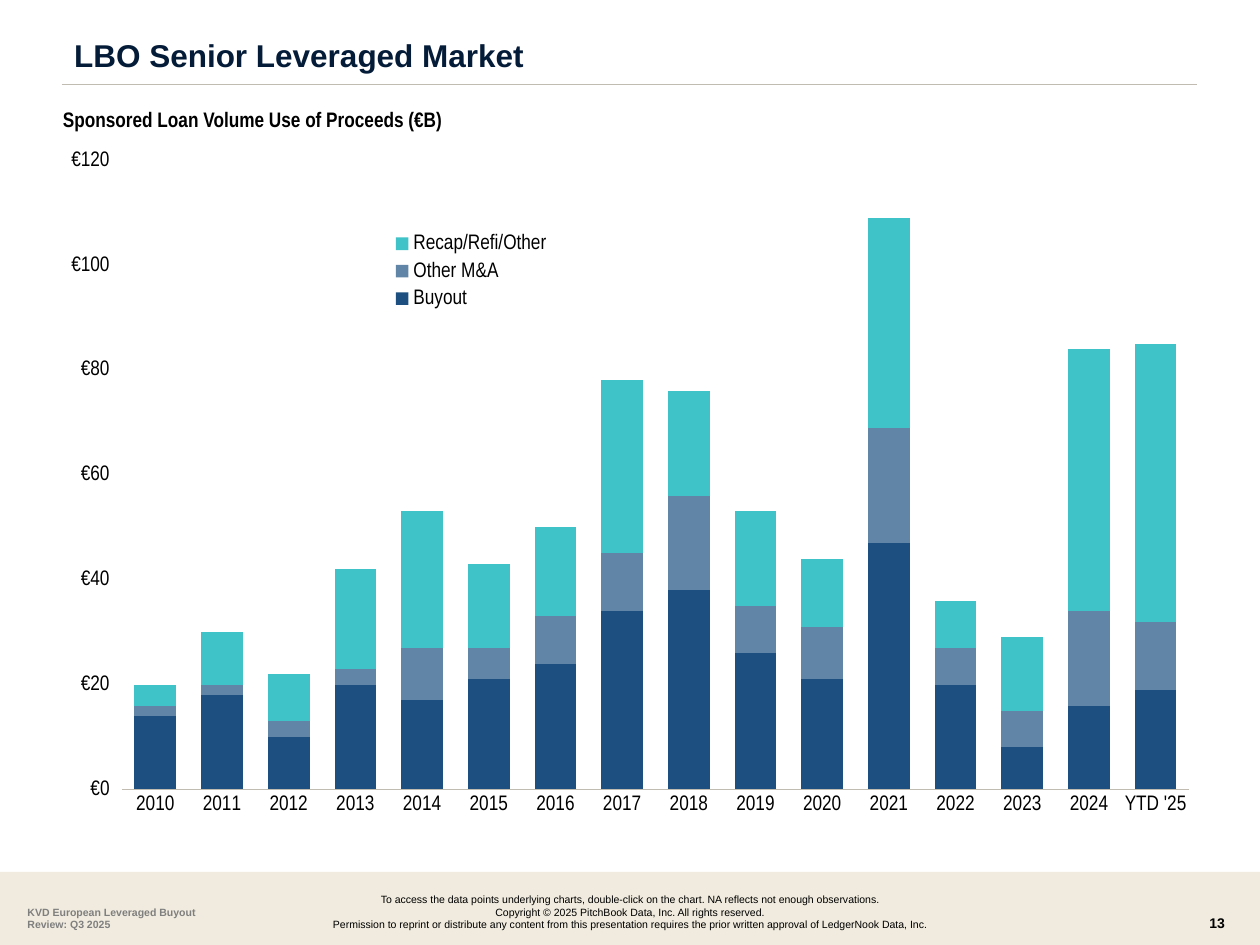
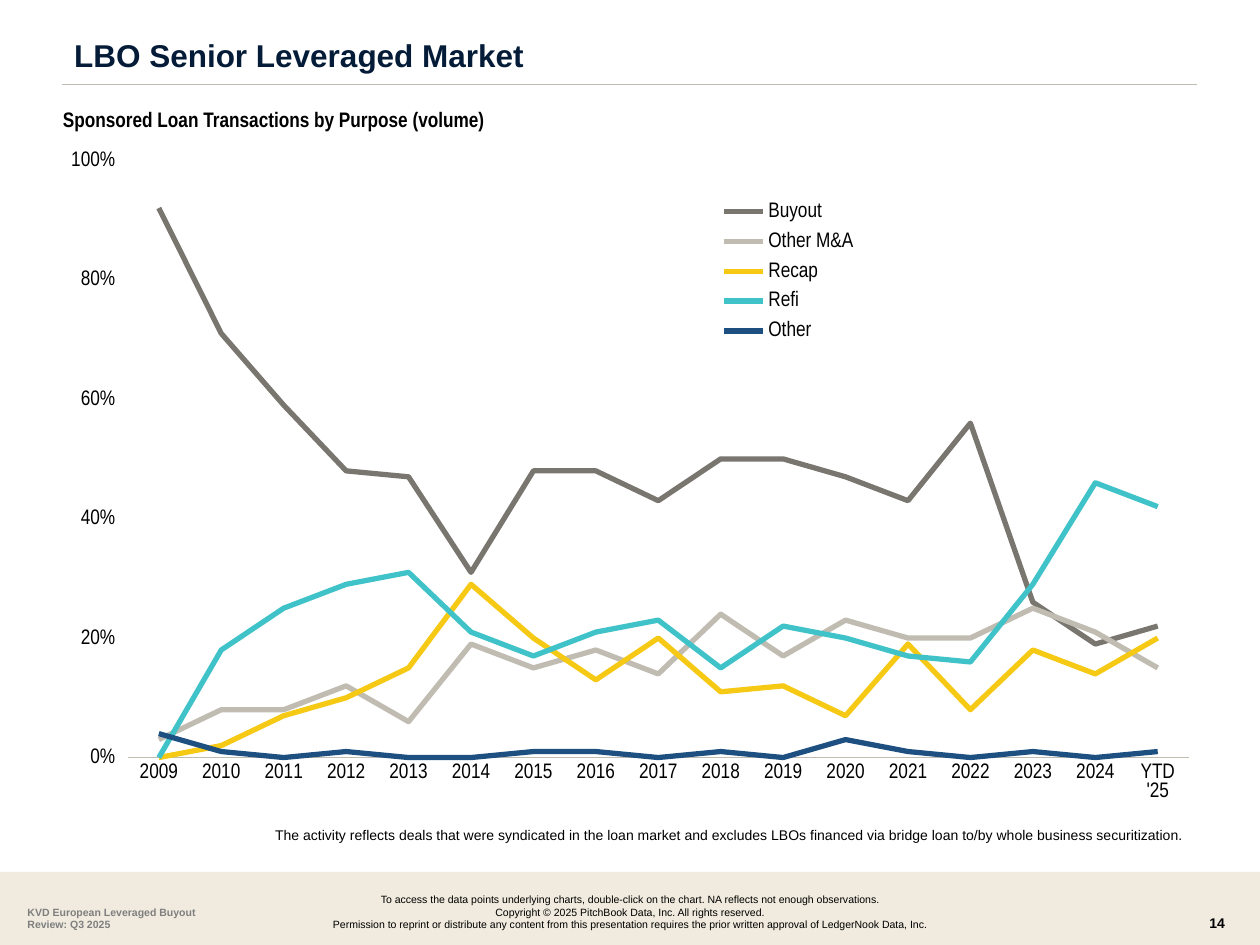
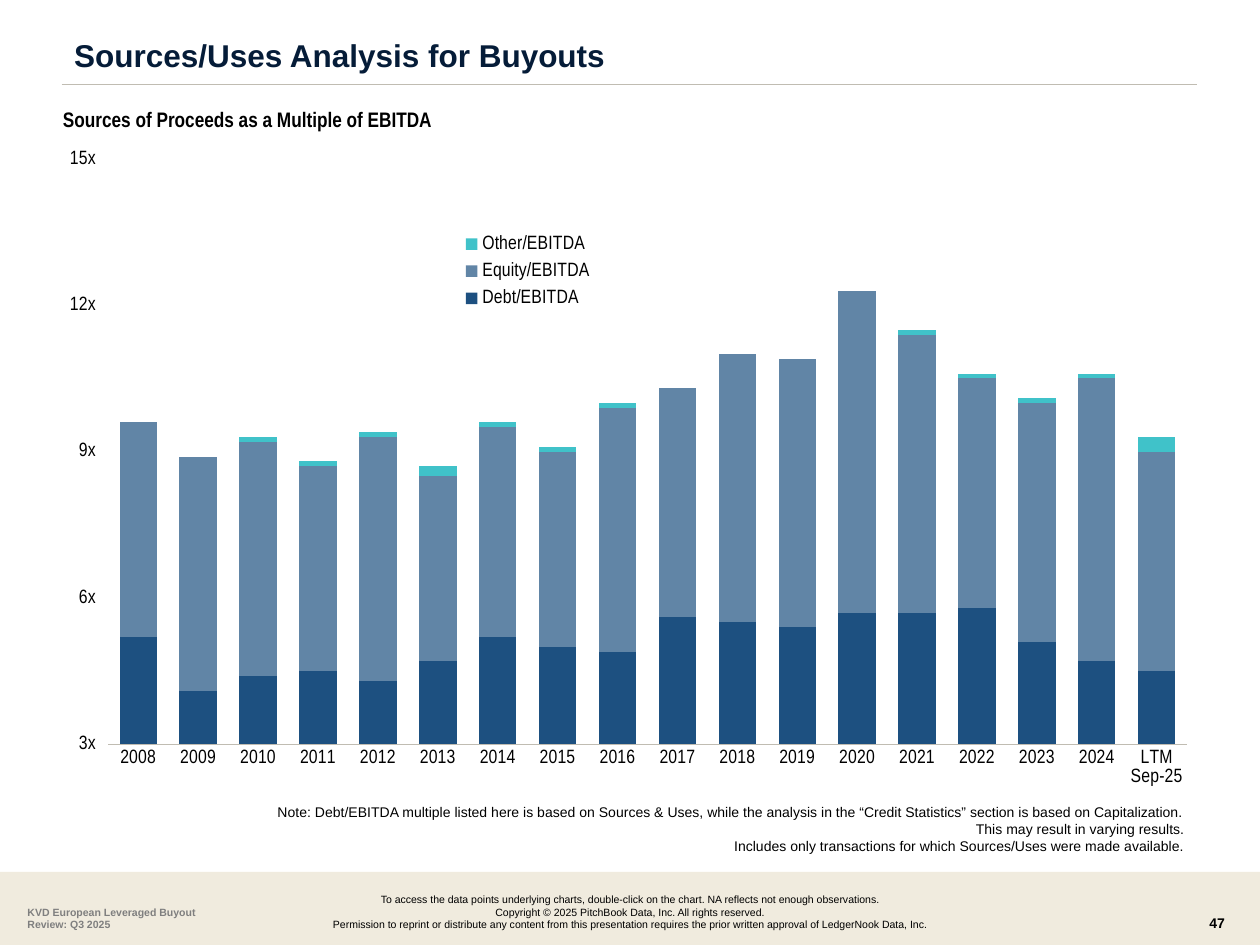
from dataclasses import dataclass

from lxml.etree import SubElement
from pptx import Presentation
from pptx.chart.data import CategoryChartData
from pptx.dml.color import RGBColor
from pptx.enum.chart import XL_CHART_TYPE, XL_LEGEND_POSITION, XL_TICK_MARK
from pptx.enum.shapes import MSO_CONNECTOR, MSO_SHAPE
from pptx.enum.text import MSO_ANCHOR, PP_ALIGN
from pptx.oxml.ns import qn
from pptx.util import Inches, Pt


@dataclass
class Theme:
    sans: str = "Arial"
    slim: str = "Arial Narrow"
    black: str = "000000"
    ink: str = "051C38"
    gray: str = "7F7F7F"
    sand: str = "F0EBDE"
    stone: str = "C0BCB2"
    taupe: str = "78766F"
    gold: str = "F5C914"
    teal: str = "40C2C9"
    steel: str = "6185A6"
    navy: str = "1D5080"
    title: float = 18
    head: float = 12
    note: float = 8
    foot: float = 6


look = Theme()


def write(slide, box, paras, size, color=look.black, bold=False,
          align=PP_ALIGN.LEFT, face=look.sans, lead=None):
    frame = slide.shapes.add_textbox(*map(Inches, box)).text_frame
    frame.word_wrap = True
    for i, lines in enumerate(paras):
        para = frame.paragraphs[0] if i == 0 else frame.add_paragraph()
        para.alignment = align
        if lead:
            para.line_spacing = lead
        for j, line in enumerate(lines):
            if j:
                para.add_line_break()
            run = para.add_run()
            run.text = line
            run.font.name = face
            run.font.size = Pt(size)
            run.font.bold = bold
            run.font.color.rgb = RGBColor.from_string(color)
    return frame


def place(part, spot, box, inner=False):
    for old in part.findall(qn("c:layout")):
        part.remove(old)
    outer = SubElement(part, qn("c:layout"))
    part.insert(spot, outer)
    rule = SubElement(outer, qn("c:manualLayout"))
    if inner:
        SubElement(rule, qn("c:layoutTarget")).set("val", "inner")
    for tag in ("xMode", "yMode"):
        SubElement(rule, qn("c:" + tag)).set("val", "edge")
    for tag, val in zip("xywh", box):
        SubElement(rule, qn("c:" + tag)).set("val", str(val))


def years(start, last):
    return [str(year) for year in range(start, 2025)] + [last]


pages = [
    {
        "num": "13",
        "title": "LBO Senior Leveraged Market",
        "head": "Sponsored Loan Volume Use of Proceeds (€B)",
        "kind": XL_CHART_TYPE.COLUMN_STACKED,
        "size": 12,
        "axis": (0, 120, 20, "[$€-83C]#,##0"),
        "plot": (0.052, 0.035, 0.941, 0.908),
        "key": (0.28, 0.13, 0.16, 0.13),
        "cats": years(2010, "YTD '25"),
        "rows": [
            ("Buyout", look.navy,
             [14, 18, 10, 20, 17, 21, 24, 34, 38, 26, 21, 47, 20, 8, 16, 19]),
            ("Other M&A", look.steel,
             [2, 2, 3, 3, 10, 6, 9, 11, 18, 9, 10, 22, 7, 7, 18, 13]),
            ("Recap/Refi/Other", look.teal,
             [4, 10, 9, 19, 26, 16, 17, 33, 20, 18, 13, 40, 9, 14, 50, 53]),
        ],
    },
    {
        "num": "14",
        "title": "LBO Senior Leveraged Market",
        "head": "Sponsored Loan Transactions by Purpose (volume)",
        "kind": XL_CHART_TYPE.LINE,
        "size": 12,
        "axis": (0, 1, 0.2, "0%"),
        "plot": (0.057, 0.035, 0.936, 0.862),
        "key": (0.56, 0.08, 0.16, 0.23),
        "cats": years(2009, "YTD '25"),
        "rows": [
            ("Buyout", look.taupe,
             [0.92, 0.71, 0.59, 0.48, 0.47, 0.31, 0.48, 0.48, 0.43,
              0.5, 0.5, 0.47, 0.43, 0.56, 0.26, 0.19, 0.22]),
            ("Other M&A", look.stone,
             [0.03, 0.08, 0.08, 0.12, 0.06, 0.19, 0.15, 0.18, 0.14,
              0.24, 0.17, 0.23, 0.2, 0.2, 0.25, 0.21, 0.15]),
            ("Recap", look.gold,
             [0, 0.02, 0.07, 0.1, 0.15, 0.29, 0.2, 0.13, 0.2,
              0.11, 0.12, 0.07, 0.19, 0.08, 0.18, 0.14, 0.2]),
            ("Refi", look.teal,
             [0, 0.18, 0.25, 0.29, 0.31, 0.21, 0.17, 0.21, 0.23,
              0.15, 0.22, 0.2, 0.17, 0.16, 0.29, 0.46, 0.42]),
            ("Other", look.navy,
             [0.04, 0.01, 0, 0.01, 0, 0, 0.01, 0.01, 0,
              0.01, 0, 0.03, 0.01, 0, 0.01, 0, 0.01]),
        ],
        "note": (6.51, 0.24, [[
            "The activity reflects deals that were syndicated in the loan market and "
            "excludes LBOs financed via bridge loan to/by whole business securitization."]]),
    },
    {
        "num": "47",
        "title": "Sources/Uses Analysis for Buyouts",
        "head": "Sources of Proceeds as a Multiple of EBITDA",
        "kind": XL_CHART_TYPE.COLUMN_STACKED,
        "size": 11,
        "axis": (3, 15, 3, '0"x"'),
        "plot": (0.04, 0.033, 0.951, 0.845),
        "key": (0.34, 0.13, 0.14, 0.13),
        "cats": years(2008, "LTM Sep-25"),
        "rows": [
            ("Debt/EBITDA", look.navy,
             [5.2, 4.1, 4.4, 4.5, 4.3, 4.7, 5.2, 5, 4.9,
              5.6, 5.5, 5.4, 5.7, 5.7, 5.8, 5.1, 4.7, 4.5]),
            ("Equity/EBITDA", look.steel,
             [4.4, 4.8, 4.8, 4.2, 5, 3.8, 4.3, 4, 5,
              4.7, 5.5, 5.5, 6.6, 5.7, 4.7, 4.9, 5.8, 4.5]),
            ("Other/EBITDA", look.teal,
             [0, 0, 0.1, 0.1, 0.1, 0.2, 0.1, 0.1, 0.1,
              0, 0, 0, 0, 0.1, 0.1, 0.1, 0.1, 0.3]),
        ],
        "note": (6.33, 0.5, [
            ["Note: Debt/EBITDA multiple listed here is based on Sources & Uses, while the "
             "analysis in the “Credit Statistics” section is based on Capitalization.",
             "This may result in varying results."],
            ["Includes only transactions for which Sources/Uses were made available."]]),
    },
]

legal = [
    ["To access the data points underlying charts, double-click on the chart. "
     "NA reflects not enough observations."],
    ["Copyright © 2025 PitchBook Data, Inc. All rights reserved."],
    ["Permission to reprint or distribute any content from this presentation "
     "requires the prior written approval of LedgerNook Data, Inc."],
]

deck = Presentation()
deck.slide_width = Inches(10)
deck.slide_height = Inches(7.5)

for page in pages:
    slide = deck.slides.add_slide(deck.slide_layouts[6])

    band = slide.shapes.add_shape(
        MSO_SHAPE.RECTANGLE, Inches(0), Inches(6.92), Inches(10), Inches(0.58))
    band.shadow.inherit = False
    band.fill.solid()
    band.fill.fore_color.rgb = RGBColor.from_string(look.sand)
    band.line.fill.background()

    write(slide, (9.5, 7.21, 0.42, 0.25), [[page["num"]]], look.note, bold=True)
    write(slide, (0.84, 7.04, 8.32, 0.4), legal, look.foot, align=PP_ALIGN.CENTER)
    write(slide, (0.12, 7.14, 1.54, 0.3),
          [["KVD European Leveraged Buyout Review: Q3 2025"]],
          look.foot, look.gray, True)

    rule = slide.shapes.add_connector(
        MSO_CONNECTOR.STRAIGHT, Inches(0.49), Inches(0.67), Inches(9.5), Inches(0.67))
    rule.line.color.rgb = RGBColor.from_string(look.stone)
    rule.line.width = Pt(0.75)
    SubElement(rule._element.spPr, qn("a:effectLst"))

    write(slide, (0.49, 0.27, 7.68, 0.31), [[page["title"]]],
          look.title, look.ink, True, lead=0.9)
    head = write(slide, (0.5, 0.77, 5.7, 0.31), [[page["head"]]],
                 look.head, bold=True, face=look.slim, lead=1.2)
    head.margin_left = 0
    head.vertical_anchor = MSO_ANCHOR.MIDDLE

    data = CategoryChartData()
    data.categories = page["cats"]
    for name, _, vals in page["rows"]:
        data.add_series(name, vals)
    chart = slide.shapes.add_chart(
        page["kind"], Inches(0.5), Inches(1.08), Inches(9), Inches(5.5), data).chart
    chart.has_title = False
    chart.font.name = look.slim
    chart.font.size = Pt(page["size"])
    chart.font.color.rgb = RGBColor.from_string(look.black)

    plot = chart.plots[0]
    plot.vary_by_categories = False
    lined = page["kind"] == XL_CHART_TYPE.LINE
    if not lined:
        plot.gap_width = 60
        plot.overlap = 100
    for item, (_, color, _) in zip(plot.series, page["rows"]):
        if lined:
            item.smooth = False
            item.format.line.width = Pt(3)
            item.format.line.color.rgb = RGBColor.from_string(color)
        else:
            item.format.fill.solid()
            item.format.fill.fore_color.rgb = RGBColor.from_string(color)

    base = chart.category_axis
    base.major_tick_mark = XL_TICK_MARK.NONE
    base.format.line.width = Pt(0.25)
    base.format.line.color.rgb = RGBColor.from_string(look.stone)

    side = chart.value_axis
    side.minimum_scale, side.maximum_scale, side.major_unit, style = page["axis"]
    side.tick_labels.number_format = style
    side.tick_labels.number_format_is_linked = False
    side.has_major_gridlines = False
    side.major_tick_mark = XL_TICK_MARK.OUTSIDE
    side.format.line.fill.background()

    chart.has_legend = True
    chart.legend.position = XL_LEGEND_POSITION.CORNER
    chart.legend.include_in_layout = False
    place(chart.legend._element, 1, page["key"])
    place(chart._chartSpace.chart.plotArea, 0, page["plot"], True)

    if "note" in page:
        top, high, lines = page["note"]
        write(slide, (0.58, top, 8.92, high), lines, look.note, align=PP_ALIGN.RIGHT)

deck.save("out.pptx")
